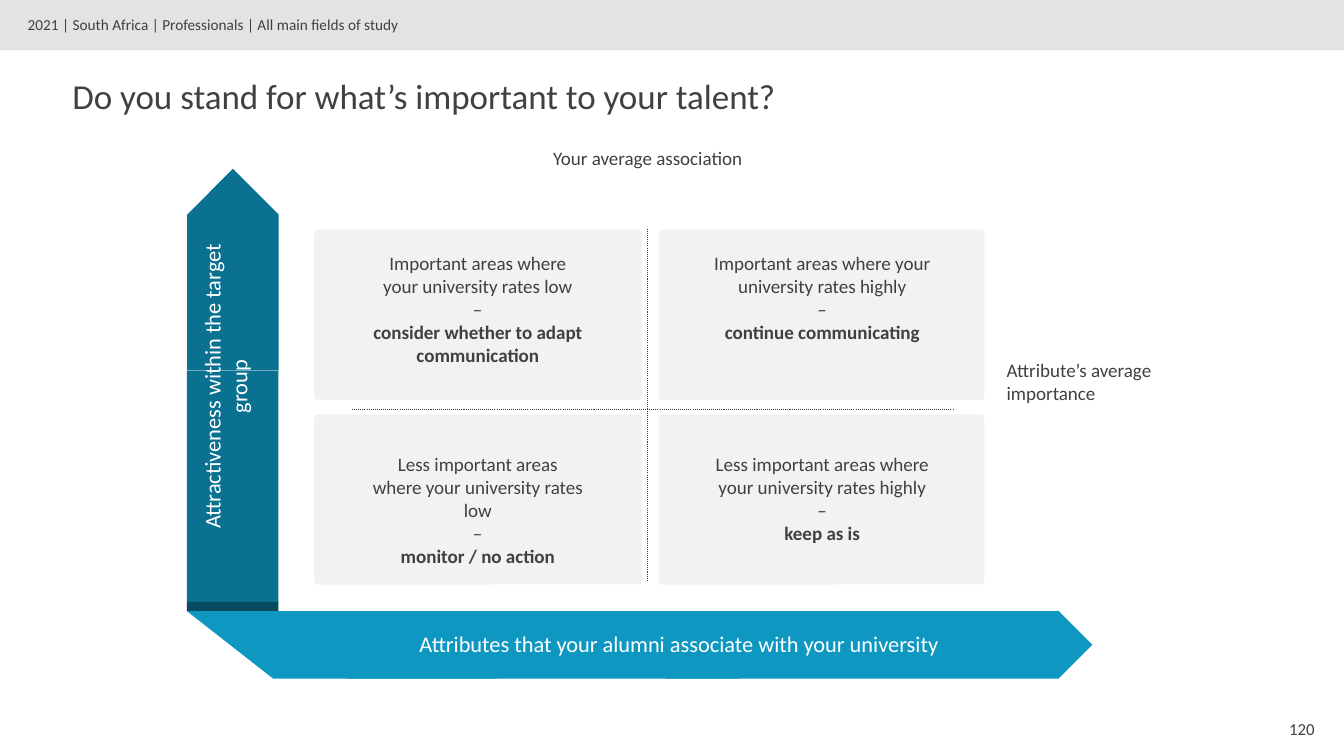
from itertools import product
from lxml.etree import SubElement
from pptx import Presentation
from pptx.dml.color import RGBColor
from pptx.enum.dml import MSO_LINE
from pptx.enum.shapes import MSO_CONNECTOR, MSO_SHAPE
from pptx.enum.text import MSO_ANCHOR, MSO_AUTO_SIZE, PP_ALIGN
from pptx.oxml.ns import qn
from pptx.util import Cm, Pt

HUES = {
    "ink": "414041",
    "white": "FFFFFF",
    "band": "E2E3E4",
    "card": "F2F2F2",
    "blue": "0E97C1",
    "teal": "0B7191",
    "dark": "074B60",
}


class Deck:
    """Hold the style and the current slide."""

    def __init__(self, wide, high, font):
        self.prs = Presentation()
        self.prs.slide_width, self.prs.slide_height = Cm(wide), Cm(high)
        self.font = font
        self.slide = self.prs.slides.add_slide(self.prs.slide_layouts[5])

    def hue(self, name):
        """Return the named colour."""
        return RGBColor.from_string(HUES[name])

    def fill(self, frame, lines, size, hue, align, anchor, strong=False):
        """Fill a text frame, with its last line bold if strong."""
        frame.word_wrap = True
        frame.auto_size = MSO_AUTO_SIZE.NONE
        frame.vertical_anchor = anchor
        frame.text = "\n".join(lines)
        for para in frame.paragraphs:
            para.alignment = align
            font = para.runs[0].font
            font.name, font.size = self.font, Pt(size)
            font.color.rgb = self.hue(hue)
        font.bold = strong

    def title(self, text, box, size):
        """Place and format the title."""
        shape = self.slide.shapes.title
        shape.left, shape.top, shape.width, shape.height = map(Cm, box)
        self.fill(shape.text_frame, [text], size, "ink", PP_ALIGN.LEFT, MSO_ANCHOR.MIDDLE)

    def text(self, lines, box, size=13.6, hue="ink", align=PP_ALIGN.CENTER,
             anchor=MSO_ANCHOR.TOP, turn=0, strong=False):
        """Add a text box."""
        shape = self.slide.shapes.add_textbox(*map(Cm, box))
        shape.rotation = turn
        self.fill(shape.text_frame, lines, size, hue, align, anchor, strong)

    def shape(self, kind, box, hue, turn=0, bend=None, flip=False):
        """Add a filled shape without a line."""
        shape = self.slide.shapes.add_shape(kind, *map(Cm, box))
        shape.shadow.inherit = False
        shape.fill.solid()
        shape.fill.fore_color.rgb = self.hue(hue)
        shape.line.fill.background()
        shape.rotation = turn
        if bend is not None:
            shape.adjustments[0] = bend
        if flip:
            shape.element.spPr.find(qn("a:xfrm")).set("flipV", "1")

    def line(self, ends):
        """Add a dotted line."""
        line = self.slide.shapes.add_connector(MSO_CONNECTOR.STRAIGHT, *map(Cm, ends))
        line.line.color.rgb = self.hue("ink")
        line.line.width = Pt(0.75)
        line.line.dash_style = MSO_LINE.ROUND_DOT
        SubElement(line.element.spPr, qn("a:effectLst"))


def main():
    """Build the slide."""
    deck = Deck(33.87, 19.05, "Calibri")
    deck.shape(MSO_SHAPE.RECTANGLE, (0, 0, 33.87, 1.27), "band")
    deck.title("Do you stand for what’s important to your talent?", (1.57, 1.63, 31.88, 1.57), 25)
    deck.text(["2021 | South Africa | Professionals | All main fields of study"],
              (0.45, 0.23, 28.85, 0.79), 10.9, align=PP_ALIGN.LEFT, anchor=MSO_ANCHOR.MIDDLE)
    deck.text(["120"], (30.89, 17.86, 2.49, 1.02), 12, align=PP_ALIGN.RIGHT,
              anchor=MSO_ANCHOR.MIDDLE)

    cols = [(7.92, 8.26, 9.12, 5.84), (16.61, 8.2, 17.53, 6.38)]
    rows = [(5.79, 6.22), (10.44, 11.28)]
    cards = [
        ("Important areas where your university rates low",
         "consider whether to adapt communication"),
        ("Important areas where your university rates highly", "continue communicating"),
        ("Less important areas where your university rates low", "monitor / no action"),
        ("Less important areas where your university rates highly", "keep as is"),
    ]
    for (row, col), (state, act) in zip(product(rows, cols), cards):
        top, head = row
        left, wide, edge, span = col
        deck.shape(MSO_SHAPE.ROUNDED_RECTANGLE, (left, top, wide, 4.29), "card", bend=0.022)
        deck.text([state, "–", act], (edge, head, span, 3.18), strong=True)

    for left, turn in ((16.79, 0), (7.9, 180)):
        deck.shape(MSO_SHAPE.PENTAGON, (left, 15.4, 10.74, 1.7), "blue", turn)
    deck.shape(MSO_SHAPE.PENTAGON, (3.33, 5.64, 5.08, 2.31), "teal", 270)
    deck.shape(MSO_SHAPE.RECTANGLE, (4.71, 9.34, 2.31, 5.84), "teal")
    deck.shape(MSO_SHAPE.RECTANGLE, (4.71, 15.17, 2.31, 0.23), "dark")
    deck.shape(MSO_SHAPE.PARALLELOGRAM, (4.71, 15.4, 7.82, 1.7), "blue", bend=1.278, flip=True)
    deck.text(["Attractiveness within the target group"], (1.75, 8.92, 7.87, 1.63),
              16, "white", turn=270)
    deck.text(["Attributes that your alumni associate with your university"],
              (7.26, 15.75, 19.71, 0.94), 16, "white")

    deck.text(["Your average association"], (13.46, 3.56, 5.72, 0.84))
    deck.text(["Attribute’s average importance"], (25.12, 8.92, 4.19, 1.42), align=PP_ALIGN.LEFT)
    deck.line((16.32, 5.77, 16.32, 14.66))
    deck.line((24.03, 10.31, 8.86, 10.31))
    deck.prs.save("out.pptx")


if __name__ == "__main__":
    main()
